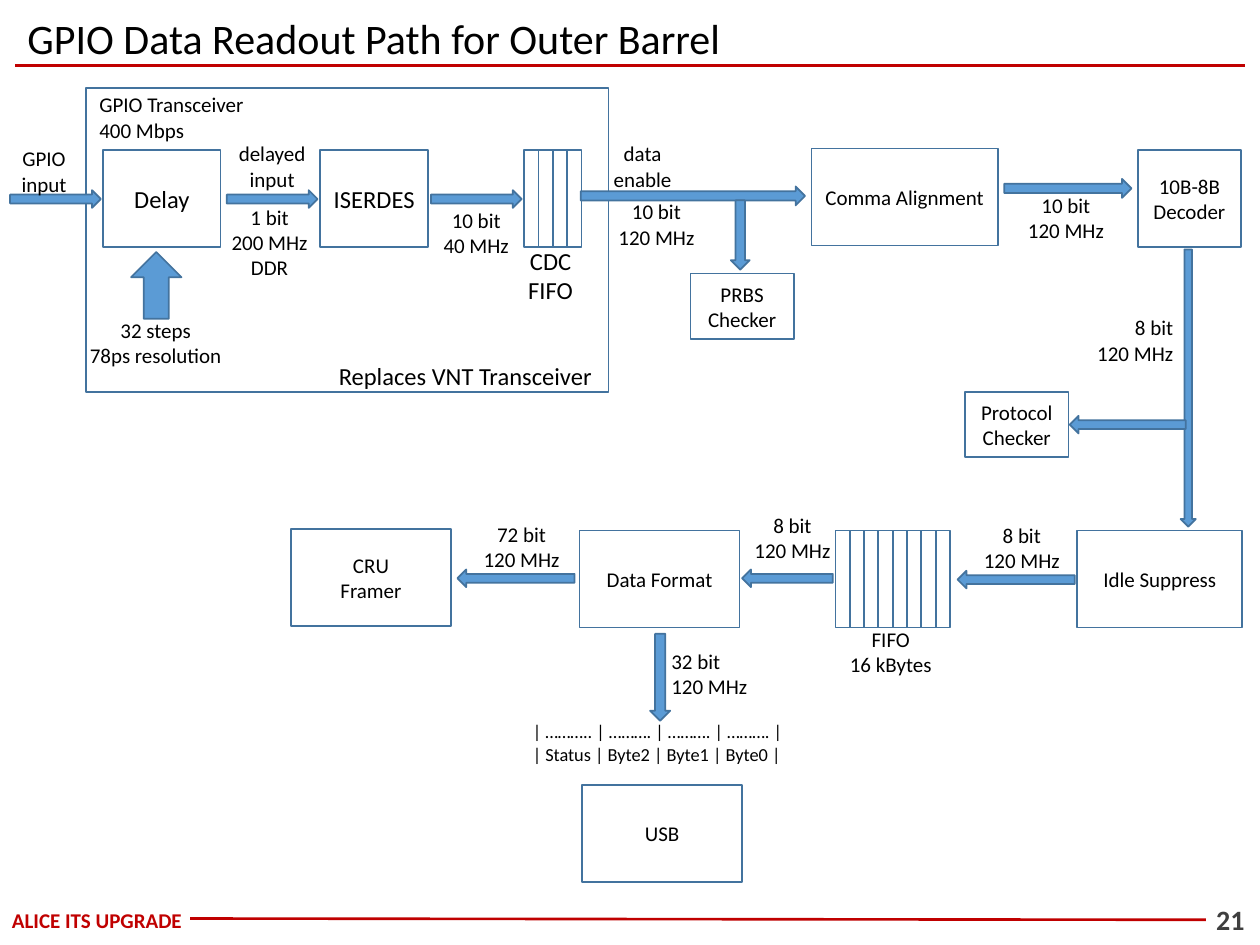
from typing import NamedTuple

from lxml import etree
from pptx import Presentation
from pptx.dml.color import RGBColor
from pptx.enum.shapes import MSO_CONNECTOR, MSO_SHAPE
from pptx.enum.text import MSO_ANCHOR, PP_ALIGN as Align
from pptx.oxml.ns import qn
from pptx.util import Inches, Pt

FONT = "Calibri"
BLACK, RED, GREY = "000000", "C00000", "3F3F3F"
BLUE, OUTLINE = "5B9BD5", "43739E"
RIGHT, DOWN = MSO_SHAPE.RIGHT_ARROW, MSO_SHAPE.DOWN_ARROW
BLOCK_H = 0.77
CELL_W = 0.91 / 8


class Block(NamedTuple):
    text: str
    x: float
    y: float
    w: float
    h: float = BLOCK_H
    size: float = 12


class Arrow(NamedTuple):
    x: float
    y: float
    w: float
    h: float = 0.14
    kind: MSO_SHAPE = RIGHT
    reverse: bool = False


class Label(NamedTuple):
    text: str
    x: float
    y: float
    w: float = 0.86
    h: float = 0.5
    size: float = 12
    align: Align = Align.CENTER


class Fifo(NamedTuple):
    x: float
    y: float
    cells: int


BLOCKS = [
    Block("", 0.68, 0.7, 4.15, 2.41),
    Block("Delay", 0.82, 1.19, 0.93, size=14),
    Block("ISERDES", 2.54, 1.19, 0.86, size=14),
    Block("Comma Alignment", 6.44, 1.18, 1.48),
    Block("10B-8B\nDecoder", 9.03, 1.19, 0.82),
    Block("PRBS\nChecker", 5.48, 2.17, 0.82, 0.52),
    Block("Protocol\nChecker", 7.66, 3.11, 0.82, 0.52),
    Block("Idle Suppress", 8.55, 4.21, 1.31),
    Block("Data Format", 4.6, 4.21, 1.27),
    Block("CRU\nFramer", 2.31, 4.2, 1.27),
    Block("USB", 4.62, 6.23, 1.27),
]

FIFOS = [Fifo(4.16, 1.19, 4), Fifo(6.63, 4.21, 8)]

ARROWS = [
    Arrow(0.08, 1.51, 0.72),
    Arrow(1.8, 1.51, 0.72),
    Arrow(3.42, 1.51, 0.72),
    Arrow(4.61, 1.48, 1.78, 0.15),
    Arrow(7.97, 1.42, 1.01, 0.15),
    Arrow(1.04, 2, 0.4, 0.53, DOWN, reverse=True),
    Arrow(5.8, 1.59, 0.15, 0.55, DOWN),
    Arrow(9.37, 1.98, 0.12, 2.2, DOWN),
    Arrow(8.49, 3.3, 0.92, reverse=True),
    Arrow(7.6, 4.53, 0.93, reverse=True),
    Arrow(5.89, 4.52, 0.72, reverse=True),
    Arrow(3.63, 4.52, 0.93, reverse=True),
    Arrow(5.16, 5.03, 0.16, 0.69, DOWN),
]

LABELS = [
    Label("GPIO Data Readout Path for Outer Barrel", 0.12, 0.05, 9.76, 0.47, 24, Align.LEFT),
    Label("GPIO Transceiver 400 Mbps", 0.69, 0.68, 1.39, align=Align.LEFT),
    Label("GPIO input", 0, 1.11, 0.7),
    Label("delayed input", 1.79, 1.07, 0.74),
    Label("1 bit\n200 MHz\nDDR", 1.71, 1.57, h=0.71),
    Label("32 steps\n78ps resolution", 0.59, 2.47, 1.29),
    Label("10 bit\n40 MHz", 3.35, 1.6),
    Label("CDC\nFIFO", 4.09, 1.9, 0.56, 0.57, 14),
    Label("Replaces VNT Transceiver", 2.59, 2.82, 2.25, 0.34, 14, Align.LEFT),
    Label("data enable", 4.73, 1.07, 0.74),
    Label("10 bit\n120 MHz", 4.79, 1.53, 0.84),
    Label("10 bit\n120 MHz", 8.03, 1.48),
    Label("8 bit\n120 MHz", 8.55, 2.45, align=Align.RIGHT),
    Label("8 bit\n120 MHz", 7.68, 4.1),
    Label("FIFO\n16 kBytes", 6.64, 4.92),
    Label("8 bit\n120 MHz", 5.86, 4.02),
    Label("72 bit\n120 MHz", 3.71, 4.09),
    Label("32 bit\n120 MHz", 5.23, 5.1, align=Align.LEFT),
    Label("| ……….. | ………. | ………. | ………. |\n| Status | Byte2 | Byte1 | Byte0 |",
          4.13, 5.67, 2.25, 0.45, 10.5, Align.LEFT),
]


def rgb(color: str) -> RGBColor:
    return RGBColor.from_string(color)


def write(shape, text: str, size: float, align=Align.CENTER, color=BLACK, bold=False):
    tf = shape.text_frame
    tf.word_wrap = True
    tf.text = text
    for p in tf.paragraphs:
        p.alignment = align
        for r in p.runs:
            r.font.name, r.font.size, r.font.bold = FONT, Pt(size), bold
            r.font.color.rgb = rgb(color)
    return tf


def add_preset(shapes, kind: MSO_SHAPE, x, y, w, h, fill=None):
    sp = shapes.add_shape(kind, Inches(x), Inches(y), Inches(w), Inches(h))
    sp.shadow.inherit = False
    if fill:
        sp.fill.solid()
        sp.fill.fore_color.rgb = rgb(fill)
    else:
        sp.fill.background()
    sp.line.color.rgb = rgb(OUTLINE)
    sp.line.width = Pt(1)
    return sp


def add_block(s, b: Block):
    sp = add_preset(s.shapes, MSO_SHAPE.RECTANGLE, b.x, b.y, b.w, b.h)
    if b.text:
        write(sp, b.text, b.size).vertical_anchor = MSO_ANCHOR.MIDDLE


def add_fifo(s, f: Fifo):
    group = s.shapes.add_group_shape()
    for i in range(f.cells):
        add_preset(group.shapes, MSO_SHAPE.RECTANGLE, f.x + i * CELL_W, f.y, CELL_W, BLOCK_H)


def add_arrow(s, a: Arrow):
    sp = add_preset(s.shapes, a.kind, a.x, a.y, a.w, a.h, BLUE)
    sp.rotation = 180 if a.reverse else 0


def add_label(s, t: Label, color=BLACK, bold=False):
    tb = s.shapes.add_textbox(Inches(t.x), Inches(t.y), Inches(t.w), Inches(t.h))
    return write(tb, t.text, t.size, t.align, color, bold)


def add_rule(s, x1: float, y1: float, x2: float, y2: float, width: float):
    line = s.shapes.add_connector(
        MSO_CONNECTOR.STRAIGHT, Inches(x1), Inches(y1), Inches(x2), Inches(y2))
    line.line.color.rgb = rgb(RED)
    line.line.width = Pt(width)
    etree.SubElement(line._element.spPr, qn("a:effectLst"))


def add_footer_text(s, t: Label, color: str, inset: float):
    tf = add_label(s, t, color, bold=True)
    tf.vertical_anchor = MSO_ANCHOR.MIDDLE
    tf.margin_left = tf.margin_right = tf.margin_top = tf.margin_bottom = Inches(inset)
    tf.word_wrap = False


def main():
    prs = Presentation()
    prs.slide_width, prs.slide_height = Inches(10), Inches(7.5)
    s = prs.slides.add_slide(prs.slide_layouts[6])

    add_rule(s, 0.12, 0.52, 9.88, 0.52, 2.25)
    add_rule(s, 9.57, 7.3, 1.51, 7.29, 1.5)
    add_footer_text(s, Label("ALICE ITS UPGRADE", 0.02, 7.22, 1.5, 0.16), RED, 0)
    add_footer_text(s, Label("21", 9.57, 7.14, 0.39, 0.31, 16), GREY, 0.04)

    for draw, items in ((add_block, BLOCKS), (add_fifo, FIFOS),
                        (add_arrow, ARROWS), (add_label, LABELS)):
        for item in items:
            draw(s, item)

    prs.save("out.pptx")


if __name__ == "__main__":
    main()
